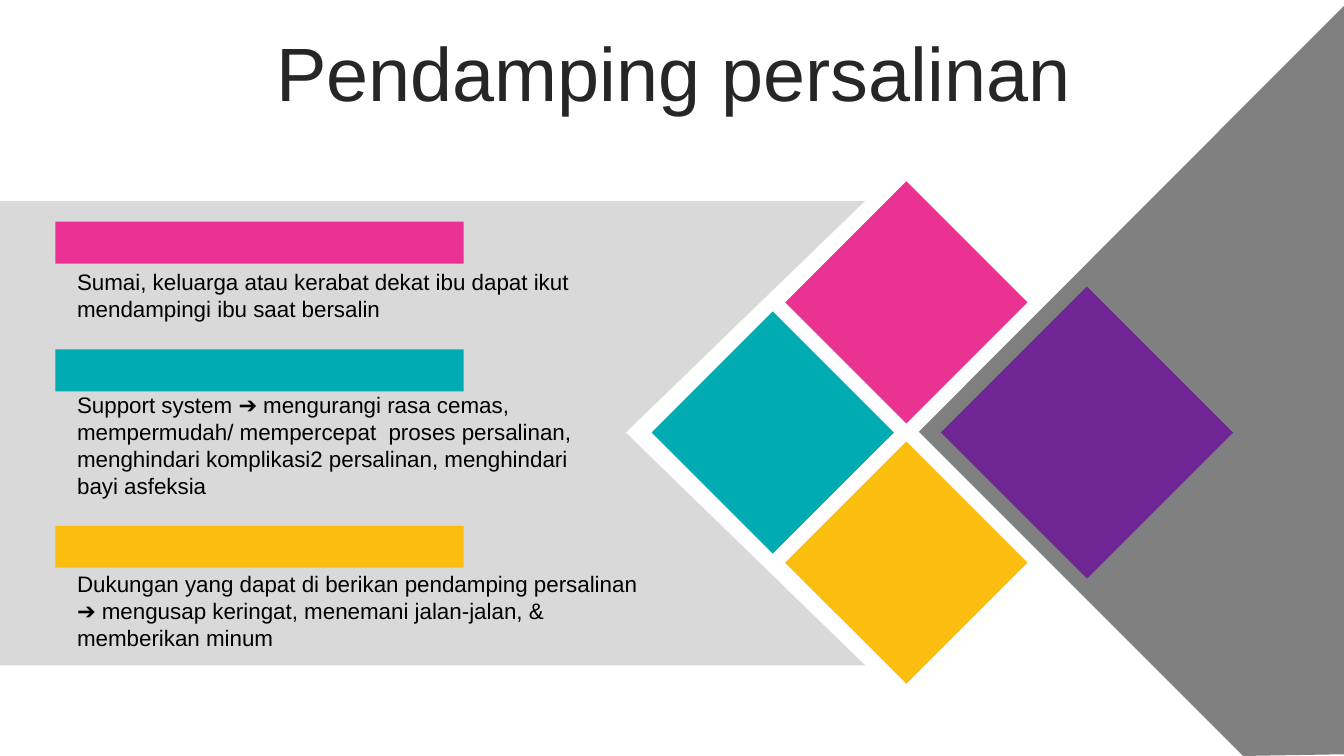
import pptx
import pptx.dml.color
import pptx.enum.shapes
import pptx.enum.text
import pptx.util

RGBColor = pptx.dml.color.RGBColor
PINK = RGBColor(0xEA, 0x32, 0x93)
TEAL = RGBColor(0x00, 0xAC, 0xB2)
YELLOW = RGBColor(0xFC, 0xBE, 0x0E)
PURPLE = RGBColor(0x6F, 0x28, 0x93)
LIGHT_GREY = RGBColor(0xD9, 0xD9, 0xD9)
GREY = RGBColor(0x80, 0x80, 0x80)
CHARCOAL = RGBColor(0x26, 0x26, 0x26)
BLACK = RGBColor(0, 0, 0)

FONT = "Arial"
COLUMNS, ROWS = 160, 90
CELL = pptx.util.Inches(7.5) // ROWS
MIDDLE_ROW = 51.5

POINTS = [
    (PINK, 26.4, 31.3, 71.8, 7.7,
     "Sumai, keluarga atau kerabat dekat ibu dapat ikut mendampingi ibu saat bersalin"),
    (TEAL, 41.6, 46, 64, 17.4,
     "Support system ➔ mengurangi rasa cemas, mempermudah/ mempercepat  proses "
     "persalinan, menghindari komplikasi2 persalinan, menghindari bayi asfeksia"),
    (YELLOW, 62.6, 67.3, 71.8, 10.9,
     "Dukungan yang dapat di berikan pendamping persalinan ➔ mengusap keringat, "
     "menemani jalan-jalan, & memberikan minum"),
]


def cells(*counts):
    return [pptx.util.Emu(round(count * CELL)) for count in counts]


def paint(figure, color):
    figure.shadow.inherit = False
    figure.fill.solid()
    figure.fill.fore_color.rgb = color
    figure.line.fill.background()


def style_run(paragraph, size, color):
    font = paragraph.runs[0].font
    font.name = FONT
    font.size = pptx.util.Pt(size)
    font.color.rgb = color


def add_title(slide, wording):
    title = slide.shapes.title
    title.left, title.top, title.width, title.height = cells(4.2, 4.4, 151.9, 9.5)
    title.text_frame.text = wording
    title.text_frame.vertical_anchor = pptx.enum.text.MSO_ANCHOR.MIDDLE
    paragraph = title.text_frame.paragraphs[0]
    paragraph.alignment = pptx.enum.text.PP_ALIGN.CENTER
    paragraph.line_spacing = 0.9
    style_run(paragraph, 54, CHARCOAL)


def add_polygon(slide, corners, color):
    start, *others = [cells(*corner) for corner in corners]
    outline = slide.shapes.build_freeform(*start)
    outline.add_line_segments(others, close=True)
    paint(outline.convert_to_shape(), color)


def add_block(slide, left, top, width, height, color):
    block = slide.shapes.add_shape(
        pptx.enum.shapes.MSO_SHAPE.RECTANGLE, *cells(left, top, width, height))
    paint(block, color)
    return block


def add_diamond(slide, center_column, center_row, side, color):
    diamond = add_block(
        slide, center_column - side / 2, center_row - side / 2, side, side, color)
    diamond.rotation = 45


def add_point(slide, color, bar_row, text_row, width, height, wording):
    add_block(slide, 6.6, bar_row, 48.6, 5, color)
    explanation = slide.shapes.add_textbox(*cells(8, text_row, width, height))
    explanation.text_frame.word_wrap = True
    explanation.text_frame.text = wording
    style_run(explanation.text_frame.paragraphs[0], 16, BLACK)


def main():
    deck = pptx.Presentation()
    deck.slide_width, deck.slide_height = cells(COLUMNS, ROWS)
    slide = deck.slides.add_slide(deck.slide_layouts[5])

    add_title(slide, "Pendamping persalinan")
    add_polygon(slide, [(0, 23.9), (103, 23.9), (74.5, MIDDLE_ROW),
                        (103, 79.2), (0, 79.2)], LIGHT_GREY)
    add_polygon(slide, [(COLUMNS, 0.7), (COLUMNS, 89.8), (148, ROWS),
                        (109.4, 51.4)], GREY)
    add_diamond(slide, 129.4, MIDDLE_ROW, 24.6, PURPLE)
    for point in POINTS:
        add_point(slide, *point)
    for column, row_offset, color in [(92, 0, TEAL), (107.9, -15.5, PINK),
                                      (107.9, 15.5, YELLOW)]:
        add_diamond(slide, column, MIDDLE_ROW + row_offset, 20.4, color)

    deck.save("out.pptx")


if __name__ == "__main__":
    main()
